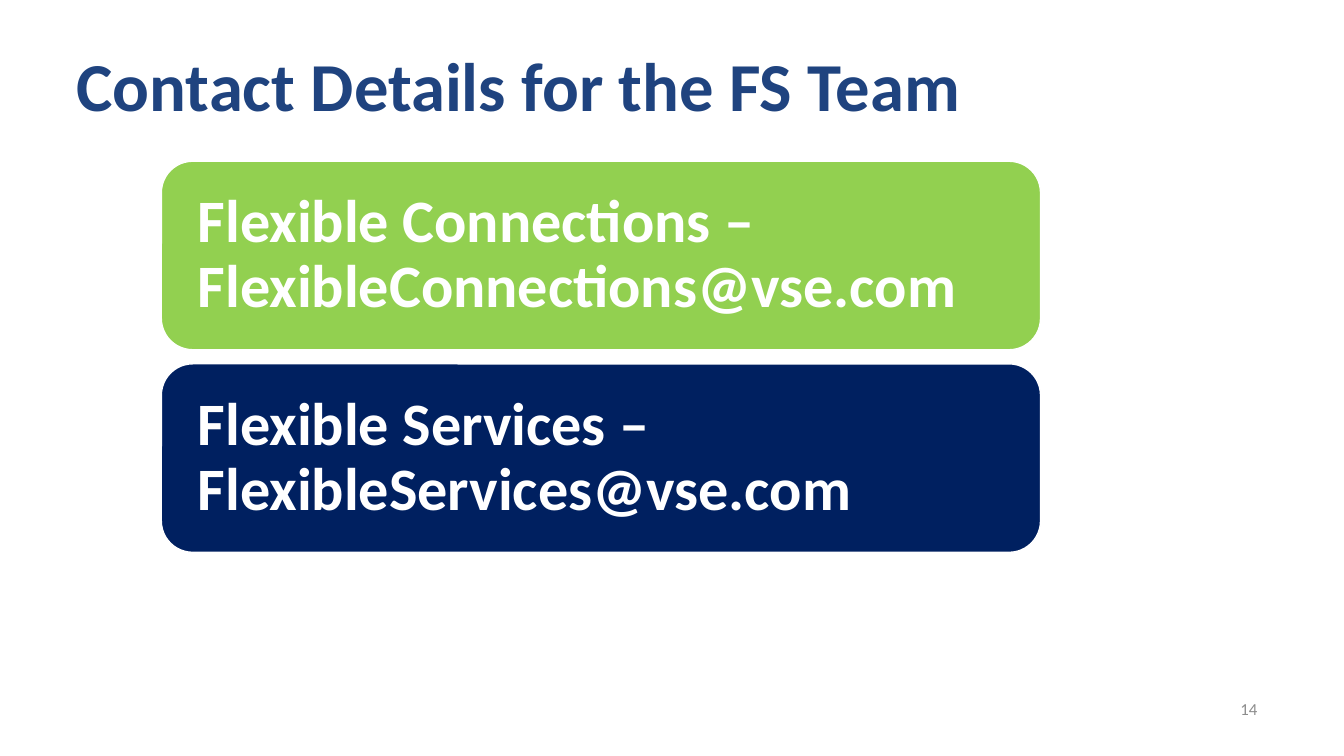
from pptx import Presentation
from pptx.dml.color import RGBColor
from pptx.enum.shapes import MSO_SHAPE
from pptx.enum.text import MSO_ANCHOR, MSO_AUTO_SIZE, PP_ALIGN
from pptx.util import Inches, Pt

TITLE_BLUE = RGBColor(0x1F, 0x43, 0x7F)
GREEN = RGBColor(0x92, 0xD0, 0x50)
NAVY = RGBColor(0x00, 0x20, 0x60)
WHITE = RGBColor(0xFF, 0xFF, 0xFF)
GREY = RGBColor(0x8C, 0x8C, 0x8C)

TITLE = "Contact Details for the FS Team"
PAGE = "14"
CONTACTS = [
    ("Flexible Connections – FlexibleConnections@vse.com", GREEN),
    ("Flexible Services – FlexibleServices@vse.com", NAVY),
]

CARD_LEFT, CARD_TOP = 1.6, 1.6
CARD_WIDTH, CARD_HEIGHT = 8.72, 1.87
CARD_GAP = 0.14
CARD_INSET = 0.27


def write(shape, text, size, color, bold=False, align=PP_ALIGN.LEFT):
    """Put one middle-anchored line of formatted text into a shape."""
    frame = shape.text_frame
    frame.word_wrap = True
    frame.auto_size = MSO_AUTO_SIZE.NONE
    frame.vertical_anchor = MSO_ANCHOR.MIDDLE
    paragraph = frame.paragraphs[0]
    paragraph.alignment = align
    paragraph.line_spacing = 0.9
    run = paragraph.add_run()
    run.text = text
    run.font.name = "Calibri"
    run.font.size = Pt(size)
    run.font.bold = bold
    run.font.color.rgb = color
    return frame


def add_card(slide, row, text, fill):
    top = CARD_TOP + row * (CARD_HEIGHT + CARD_GAP)
    card = slide.shapes.add_shape(
        MSO_SHAPE.ROUNDED_RECTANGLE, Inches(CARD_LEFT), Inches(top),
        Inches(CARD_WIDTH), Inches(CARD_HEIGHT))
    card.shadow.inherit = False
    card.fill.solid()
    card.fill.fore_color.rgb = fill
    card.line.color.rgb = WHITE
    card.line.width = Pt(1)
    frame = write(card, text, 43, WHITE, bold=True)
    frame.margin_left = frame.margin_right = Inches(CARD_INSET)


def main():
    prs = Presentation()
    prs.slide_width, prs.slide_height = Inches(13.33), Inches(7.5)
    slide = prs.slides.add_slide(prs.slide_layouts[5])

    title = slide.shapes.title
    title.left, title.top = Inches(0.66), Inches(0.65)
    title.width, title.height = Inches(11.86), Inches(0.48)
    write(title, TITLE, 49, TITLE_BLUE, bold=True)

    for row, (text, fill) in enumerate(CONTACTS):
        add_card(slide, row, text, fill)

    page = slide.shapes.add_textbox(
        Inches(0.69), Inches(6.93), Inches(11.88), Inches(0.22))
    write(page, PAGE, 12, GREY, align=PP_ALIGN.RIGHT)

    prs.save("out.pptx")


if __name__ == "__main__":
    main()
